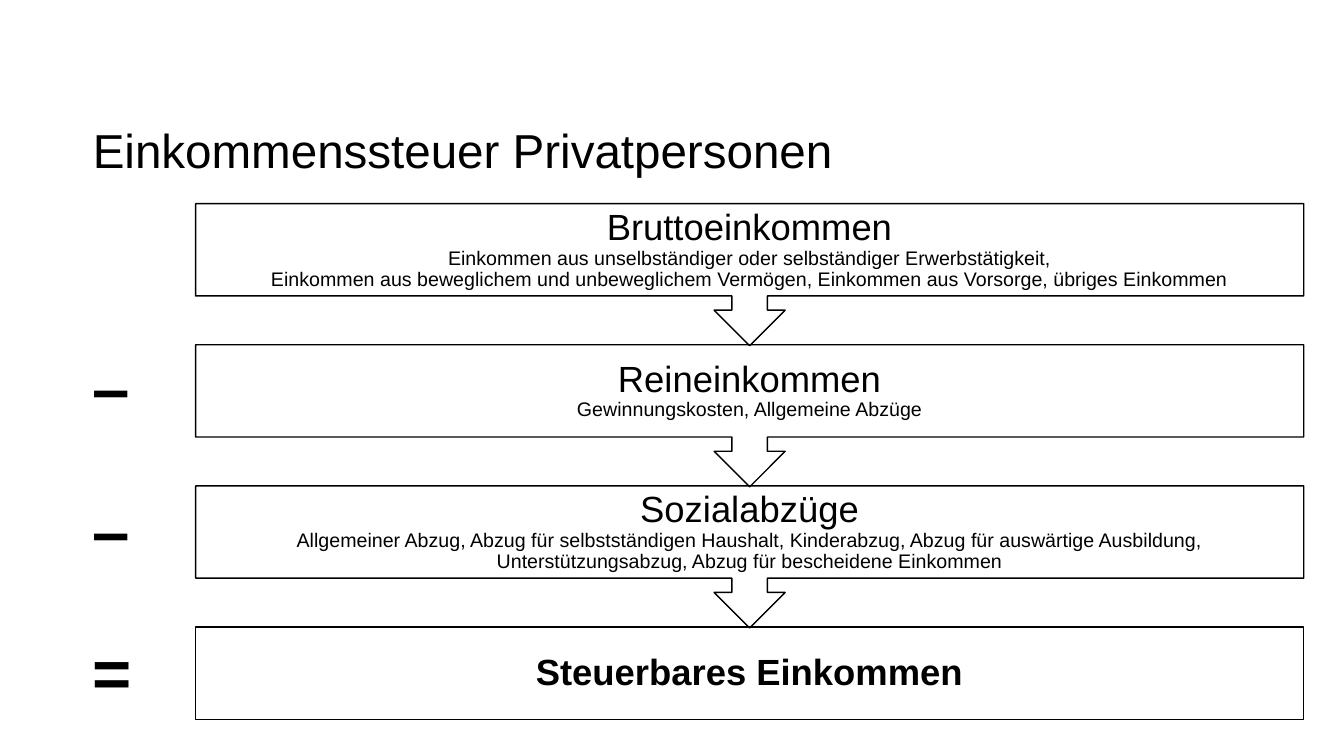
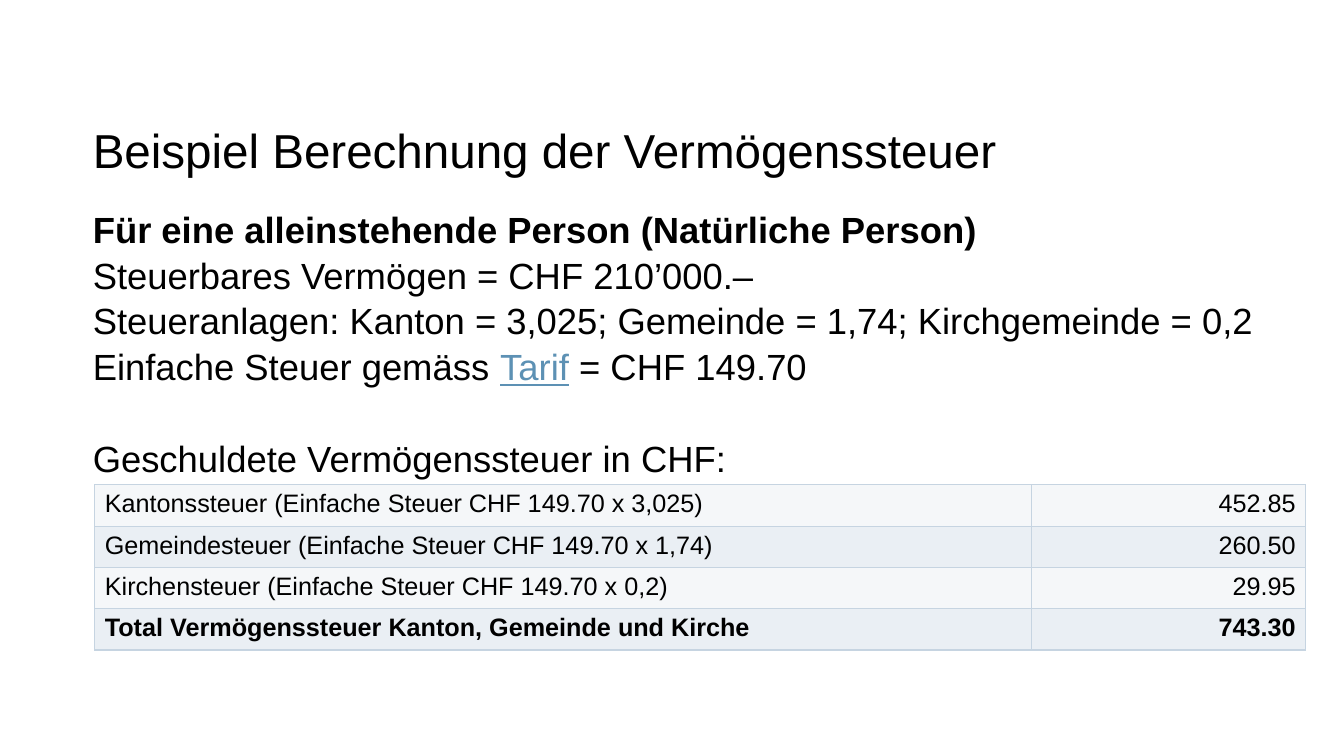
from dataclasses import dataclass

from lxml import etree
from pptx import Presentation
from pptx import util as u
from pptx.dml.color import RGBColor
from pptx.enum import shapes, text
from pptx.oxml import ns


@dataclass(frozen=True)
class Theme:
    font: str = "Arial"
    ink: str = "000000"
    link: str = "5D91B4"
    border: str = "C6D4E1"
    bands: tuple = ("F5F7F9", "EAEFF4")
    title: int = 34
    heading: int = 26
    detail: int = 14
    table: int = 18
    sign: int = 48
    left: float = 0.92
    width: float = 12.01
    content_top: float = 2.03


THEME = Theme()
LEFT = text.PP_ALIGN.LEFT
CENTER = text.PP_ALIGN.CENTER
RIGHT = text.PP_ALIGN.RIGHT
MIDDLE = text.MSO_ANCHOR.MIDDLE
TOP = text.MSO_ANCHOR.TOP

STEP_TOP = 2.02
STEP_PITCH = 1.4
STEP_LEFT = 1.94
STEP_WIDTH = 10.99
BOX_HEIGHT = 0.92
CALLOUT_HEIGHT = 1.41

STEPS = [
    ("Bruttoeinkommen",
     "Einkommen aus unselbständiger oder selbständiger Erwerbstätigkeit,\n"
     "Einkommen aus beweglichem und unbeweglichem Vermögen, "
     "Einkommen aus Vorsorge, übriges Einkommen"),
    ("Reineinkommen", "Gewinnungskosten, Allgemeine Abzüge"),
    ("Sozialabzüge",
     "Allgemeiner Abzug, Abzug für selbstständigen Haushalt, Kinderabzug, "
     "Abzug für auswärtige Ausbildung, Unterstützungsabzug, "
     "Abzug für bescheidene Einkommen"),
]
RESULT = "Steuerbares Einkommen"
SIGNS = ["–", "–", "="]

TAX_ROWS = [
    ("Kantonssteuer (Einfache Steuer CHF 149.70 x 3,025)", "452.85"),
    ("Gemeindesteuer (Einfache Steuer CHF 149.70 x 1,74)", "260.50"),
    ("Kirchensteuer (Einfache Steuer CHF 149.70 x 0,2)", "29.95"),
    ("Total Vermögenssteuer Kanton, Gemeinde und Kirche", "743.30"),
]


def color(value):
    return RGBColor.from_string(value)


def place(shape, left, top, width, height):
    shape.left, shape.top = u.Inches(left), u.Inches(top)
    shape.width, shape.height = u.Inches(width), u.Inches(height)


def prepare_frame(shape, anchor=TOP, side=0):
    frame = shape.text_frame
    frame.word_wrap = True
    frame.auto_size = text.MSO_AUTO_SIZE.NONE
    frame.vertical_anchor = anchor
    frame.margin_left = frame.margin_right = u.Inches(side)
    frame.margin_top = frame.margin_bottom = 0
    return frame


def next_paragraph(frame):
    first = frame.paragraphs[0]
    return frame.add_paragraph() if first.runs else first


def write(paragraph, content, size=THEME.heading, bold=False, ink=THEME.ink,
          underline=False, align=LEFT, spacing=1.0, before=0):
    paragraph.alignment = align
    paragraph.line_spacing = spacing
    paragraph.space_before = u.Pt(before)
    paragraph.space_after = u.Pt(0)
    for index, line in enumerate(content.split("\n")):
        if index:
            paragraph.add_line_break()
        run = paragraph.add_run()
        run.text = line
        run.font.name = THEME.font
        run.font.size = u.Pt(size)
        run.font.bold = bold
        run.font.underline = underline
        run.font.color.rgb = color(ink)


def remove_bullet(paragraph):
    properties = paragraph._p.get_or_add_pPr()
    properties.set("marL", "0")
    properties.set("indent", "0")
    etree.SubElement(properties, ns.qn("a:buNone"))


def add_slide(presentation, layout, title):
    slide = presentation.slides.add_slide(presentation.slide_layouts[layout])
    place(slide.shapes.title, THEME.left, 1.17, THEME.width, 0.68)
    frame = prepare_frame(slide.shapes.title)
    write(next_paragraph(frame), title, size=THEME.title, spacing=1.05)
    return slide


def add_step(slide, kind, index, height):
    shape = slide.shapes.add_shape(
        kind, u.Inches(STEP_LEFT), u.Inches(STEP_TOP + index * STEP_PITCH),
        u.Inches(STEP_WIDTH), u.Inches(height))
    shape.shadow.inherit = False
    shape.fill.background()
    shape.line.color.rgb = color(THEME.ink)
    shape.line.width = u.Pt(1)
    return prepare_frame(shape, MIDDLE, side=0.2)


def add_sign(slide, sign, index):
    box = slide.shapes.add_textbox(
        u.Inches(THEME.left), u.Inches(3.36 + index * 1.41),
        u.Inches(1.02), u.Inches(0.94))
    frame = prepare_frame(box, MIDDLE)
    write(next_paragraph(frame), sign, size=THEME.sign, bold=True)


def set_borders(cell):
    properties = cell._tc.get_or_add_tcPr()
    for index, side in enumerate(("lnL", "lnR", "lnT", "lnB")):
        line = etree.Element(ns.qn(f"a:{side}"), w=str(u.Pt(1)))
        fill = etree.SubElement(line, ns.qn("a:solidFill"))
        etree.SubElement(fill, ns.qn("a:srgbClr"), val=THEME.border)
        properties.insert(index, line)


def add_tax_table(slide):
    widths, row_height = (9.29, 2.72), 0.41
    table = slide.shapes.add_table(
        len(TAX_ROWS), len(widths), u.Inches(0.94), u.Inches(4.81),
        u.Inches(sum(widths)), u.Inches(row_height * len(TAX_ROWS))).table
    table.first_row = table.horz_banding = False
    for column, width in zip(table.columns, widths):
        column.width = u.Inches(width)
    for row, values in enumerate(TAX_ROWS):
        table.rows[row].height = u.Inches(row_height)
        for column, value in enumerate(values):
            cell = table.cell(row, column)
            cell.fill.solid()
            cell.fill.fore_color.rgb = color(THEME.bands[row % 2])
            set_borders(cell)
            write(cell.text_frame.paragraphs[0], value, size=THEME.table,
                  bold=row == len(TAX_ROWS) - 1,
                  align=RIGHT if column else LEFT)


def build_income_slide(presentation):
    slide = add_slide(presentation, 5, "Einkommenssteuer Privatpersonen")
    frame = add_step(slide, shapes.MSO_SHAPE.RECTANGLE, len(STEPS), BOX_HEIGHT)
    write(next_paragraph(frame), RESULT, bold=True, align=CENTER, spacing=0.9)
    for index, (heading, detail) in reversed(list(enumerate(STEPS))):
        frame = add_step(slide, shapes.MSO_SHAPE.DOWN_ARROW_CALLOUT, index,
                         CALLOUT_HEIGHT)
        for content, size in ((heading, THEME.heading), (detail, THEME.detail)):
            write(next_paragraph(frame), content, size=size, align=CENTER,
                  spacing=0.9)
    for index, sign in enumerate(SIGNS):
        add_sign(slide, sign, index)


def build_wealth_slide(presentation):
    slide = add_slide(presentation, 1, "Beispiel Berechnung der Vermögenssteuer")
    body = slide.placeholders[1]
    place(body, THEME.left, THEME.content_top, THEME.width, 5.11)
    frame = prepare_frame(body)
    lines = [
        ([("Für eine alleinstehende Person (Natürliche Person)",
           {"bold": True})], 0),
        ([("Steuerbares Vermögen = CHF 210’000.–", {})], 0),
        ([("Steueranlagen: Kanton = 3,025; Gemeinde = 1,74; "
           "Kirchgemeinde = 0,2", {})], 0),
        ([("Einfache Steuer gemäss ", {}),
          ("Tarif", {"ink": THEME.link, "underline": True}),
          (" = CHF 149.70", {})], 0),
        ([("Geschuldete Vermögenssteuer in CHF:", {})], 33),
    ]
    for runs, before in lines:
        paragraph = next_paragraph(frame)
        for content, style in runs:
            write(paragraph, content, spacing=1.05, before=before, **style)
        remove_bullet(paragraph)
    add_tax_table(slide)


def main():
    presentation = Presentation()
    presentation.slide_width = u.Inches(13.33)
    presentation.slide_height = u.Inches(7.5)
    build_income_slide(presentation)
    build_wealth_slide(presentation)
    presentation.save("out.pptx")


if __name__ == "__main__":
    main()
